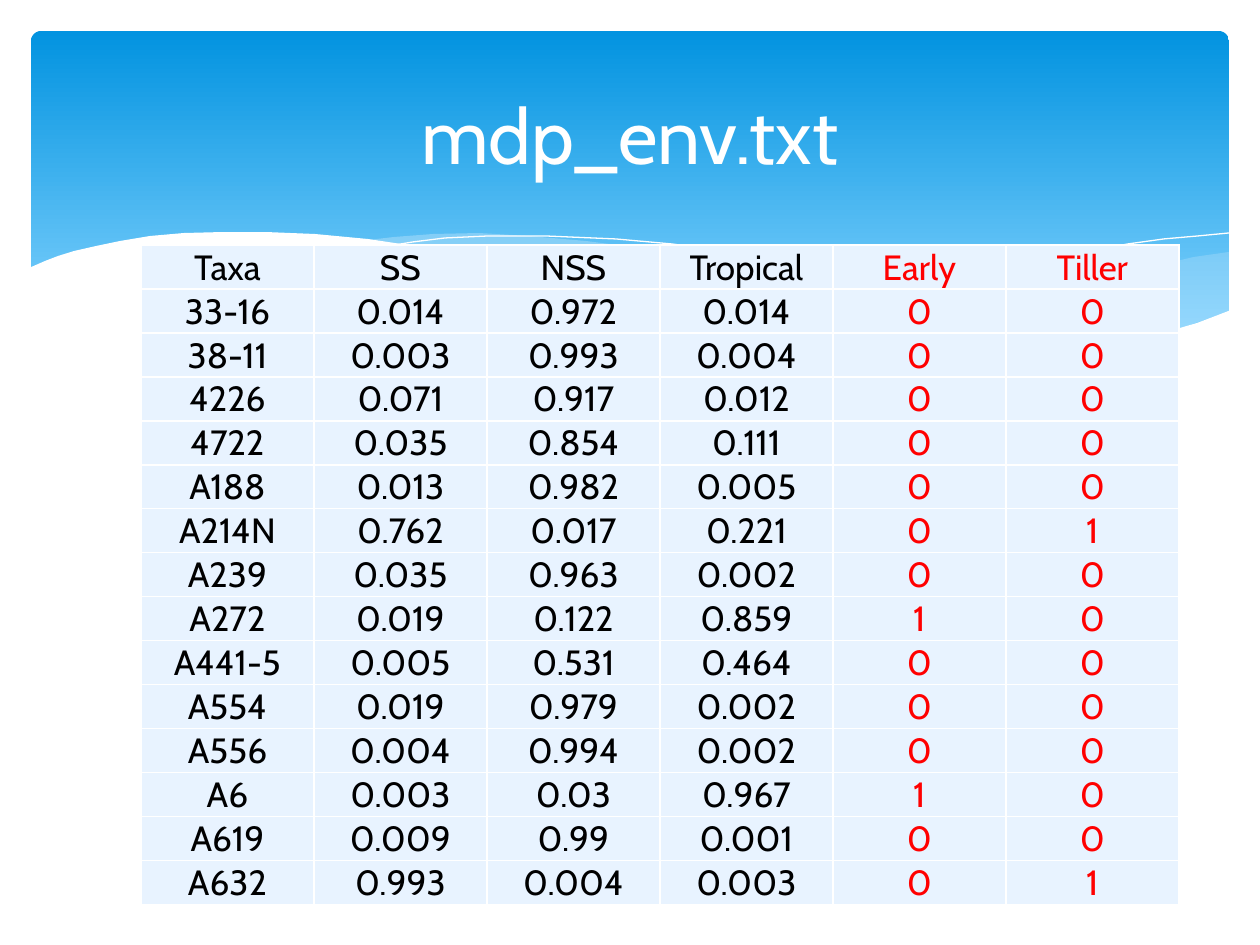
from lxml import etree
from pptx import Presentation
from pptx import util as u
from pptx.dml.color import RGBColor
from pptx.enum import shapes, text
from pptx.oxml.ns import qn

TITLE = "mdp_env.txt"
HEADER = ("Taxa", "SS", "NSS", "Tropical", "Early", "Tiller")
ROWS = [
    ("33-16", "0.014", "0.972", "0.014", "0", "0"),
    ("38-11", "0.003", "0.993", "0.004", "0", "0"),
    ("4226", "0.071", "0.917", "0.012", "0", "0"),
    ("4722", "0.035", "0.854", "0.111", "0", "0"),
    ("A188", "0.013", "0.982", "0.005", "0", "0"),
    ("A214N", "0.762", "0.017", "0.221", "0", "1"),
    ("A239", "0.035", "0.963", "0.002", "0", "0"),
    ("A272", "0.019", "0.122", "0.859", "1", "0"),
    ("A441-5", "0.005", "0.531", "0.464", "0", "0"),
    ("A554", "0.019", "0.979", "0.002", "0", "0"),
    ("A556", "0.004", "0.994", "0.002", "0", "0"),
    ("A6", "0.003", "0.03", "0.967", "1", "0"),
    ("A619", "0.009", "0.99", "0.001", "0", "0"),
    ("A632", "0.993", "0.004", "0.003", "0", "1"),
]
RED_COLUMNS = {"Early", "Tiller"}

RIGHT_WAVE = [
    (1229, 252), (1194, 257), (1160, 265), (1123, 272), (1085, 281), (1014, 299),
    (949, 312), (890, 324), (833, 334), (871, 339), (906, 343), (954, 348),
    (1012, 350), (1063, 349), (1110, 344), (1150, 336), (1187, 326), (1229, 311),
]
MIDDLE_WAVE = [
    (1125, 344), (1091, 339), (1017, 328), (934, 311), (842, 291), (793, 280),
    (736, 266), (682, 256), (633, 247), (586, 241), (529, 236), (479, 233),
    (433, 234), (394, 237), (360, 241), (407, 247), (456, 256), (509, 266),
    (566, 280), (668, 302), (736, 318), (799, 329), (857, 338), (910, 345),
    (974, 349), (1031, 350), (1080, 349),
]
LONG_CURVE = [
    (389, 246), (413, 242), (445, 238), (488, 236), (546, 236), (616, 239),
    (672, 244), (733, 252), (801, 262), (876, 276), (958, 294), (1047, 316),
    (1143, 343),
]
RIGHT_CURVE = [
    (772, 324), (823, 310), (876, 296), (942, 281), (1016, 265), (1091, 251),
    (1128, 244), (1164, 239), (1198, 236), (1229, 233),
]
WHITE_WAVE = [
    (1231, 310), (1197, 323), (1159, 334), (1118, 341), (1071, 347), (1019, 349),
    (959, 347), (892, 340), (816, 330), (730, 315), (634, 294), (563, 277),
    (493, 261), (428, 248), (368, 239), (315, 234), (266, 232), (223, 232),
    (184, 233), (150, 236), (120, 241), (96, 246), (74, 251), (58, 256),
    (45, 261), (29, 268), (29, 415), (1231, 415),
]
# points, fill, opacity in percent; no fill means an open white hairline
WAVES = [
    (RIGHT_WAVE, "C6E7FC", 29),
    (MIDDLE_WAVE, "C6E7FC", 40),
    (LONG_CURVE, None, 100),
    (RIGHT_CURVE, None, 100),
    (WHITE_WAVE, "FFFFFF", 100),
]

PX = u.Inches(1) / 126
TABLE_LEFT, TABLE_TOP = 141, 245
COLUMN_WIDTH, ROW_HEIGHT = 173, 44


def px(n):
    return u.Emu(round(n * PX))


def rgb(color):
    return RGBColor.from_string(color)


def write(tf, content, size, color="000000", font="Cabin"):
    p = tf.paragraphs[0]
    p.alignment = text.PP_ALIGN.CENTER
    r = p.add_run()
    r.text = content
    r.font.size, r.font.name = u.Pt(size), font
    r.font.color.rgb = rgb(color)


def add_banner(s):
    sp = s.shapes.add_shape(shapes.MSO_SHAPE.ROUNDED_RECTANGLE,
                            px(31), px(31), px(1198), px(340))
    sp.adjustments[0] = 0.03
    sp.shadow.inherit = False
    sp.line.fill.background()
    sp.fill.gradient()
    sp.fill.gradient_angle = 270
    stops = zip(sp.fill.gradient_stops, [(0, "0293E0"), (0.9, "83D3FE")])
    for stop, (position, color) in stops:
        stop.position = position
        stop.color.rgb = rgb(color)


def add_wave(s, points, fill, opacity):
    builder = s.shapes.build_freeform(*points[0], scale=PX)
    builder.add_line_segments(points[1:], close=fill is not None)
    sp = builder.convert_to_shape()
    sp.shadow.inherit = False
    if fill is None:
        sp.fill.background()
        sp.line.color.rgb = rgb("FFFFFF")
        sp.line.width = u.Pt(0)
        return
    sp.line.fill.background()
    sp.fill.solid()
    sp.fill.fore_color.rgb = rgb(fill)
    if opacity < 100:
        color = sp._element.spPr.find(qn("a:solidFill"))[0]
        etree.SubElement(color, qn("a:alpha"), val=str(opacity * 1000))


def add_borders(cell, color="FFFFFF", width=1):
    """Put a line on all four sides, ahead of the fill as the schema asks."""
    tc_pr = cell._tc.get_or_add_tcPr()
    for i, side in enumerate(("lnL", "lnR", "lnT", "lnB")):
        ln = etree.Element(qn(f"a:{side}"), w=str(u.Pt(width)))
        solid = etree.SubElement(ln, qn("a:solidFill"))
        etree.SubElement(solid, qn("a:srgbClr"), val=color)
        tc_pr.insert(i, ln)


def add_data_table(s):
    data = [HEADER, *ROWS]
    table = s.shapes.add_table(
        len(data), len(HEADER), px(TABLE_LEFT), px(TABLE_TOP),
        px(COLUMN_WIDTH * len(HEADER)), px(ROW_HEIGHT * len(data))).table
    for column in table.columns:
        column.width = px(COLUMN_WIDTH)
    for row, values in zip(table.rows, data):
        row.height = px(ROW_HEIGHT)
        for cell, name, value in zip(row.cells, HEADER, values):
            cell.fill.solid()
            cell.fill.fore_color.rgb = rgb("E8F3FF")
            cell.margin_left = cell.margin_right = cell.margin_top = px(1)
            cell.margin_bottom = 0
            cell.vertical_anchor = text.MSO_ANCHOR.BOTTOM
            write(cell.text_frame, value, 20,
                  color="FF0000" if name in RED_COLUMNS else "000000")
            add_borders(cell)


def main():
    prs = Presentation()
    prs.slide_width, prs.slide_height = px(1260), px(945)
    s = prs.slides.add_slide(prs.slide_layouts[6])
    add_banner(s)
    for wave in WAVES:
        add_wave(s, *wave)
    tf = s.shapes.add_textbox(px(63), px(47), px(1134), px(173)).text_frame
    tf.word_wrap = True
    tf.vertical_anchor = text.MSO_ANCHOR.MIDDLE
    write(tf, TITLE, 44, color="FFFFFF")
    add_data_table(s)
    prs.save("out.pptx")


if __name__ == "__main__":
    main()
